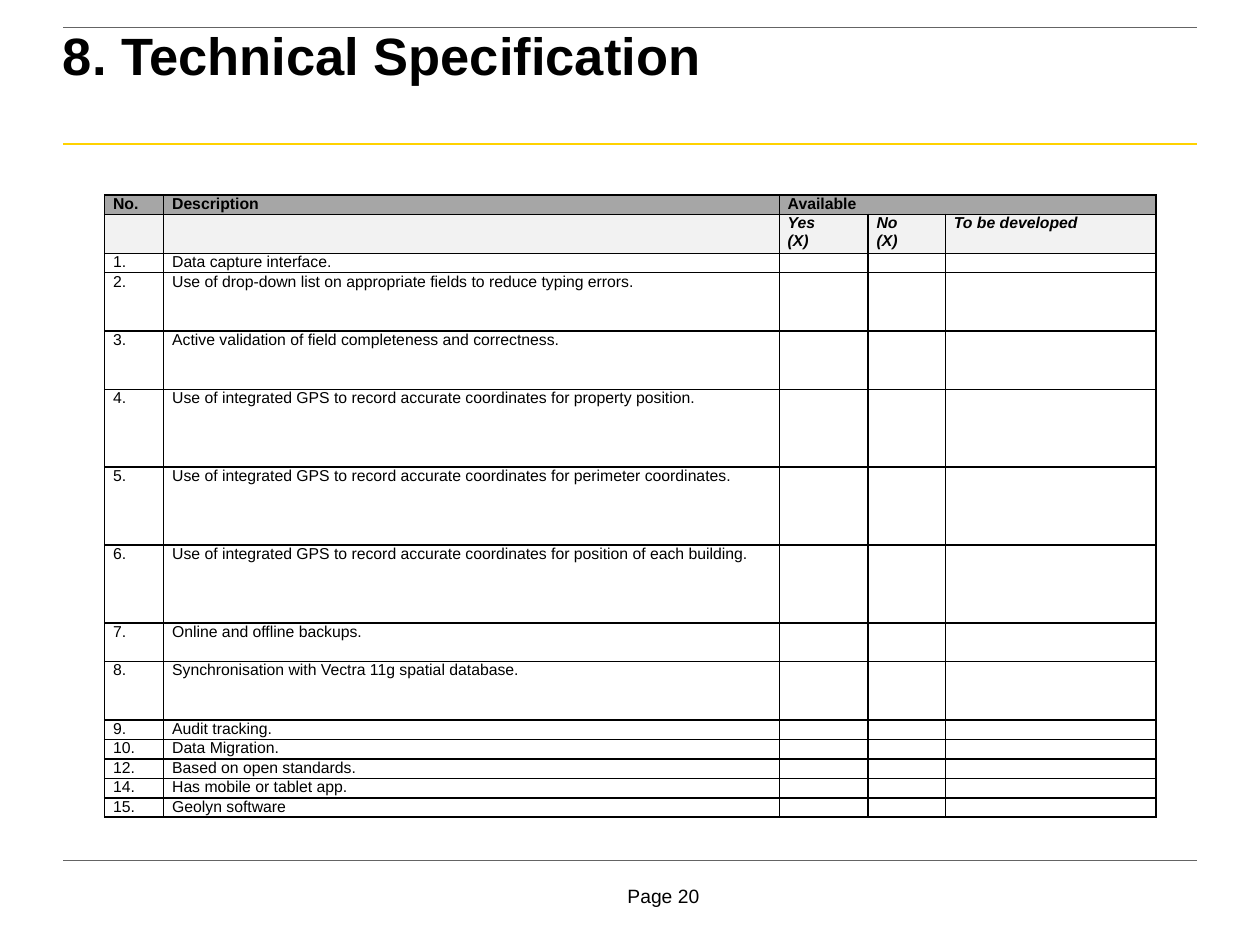
"""Build the technical specification checklist slide."""
from pptx import Presentation
from pptx.dml.color import RGBColor
from pptx.enum.shapes import MSO_CONNECTOR
from pptx.enum.text import MSO_ANCHOR, PP_ALIGN
from pptx.oxml.ns import qn
from pptx.util import Cm, Pt
from lxml import etree

STRAIGHT = MSO_CONNECTOR.STRAIGHT
TOP = MSO_ANCHOR.TOP
LEFT, JUSTIFY = PP_ALIGN.LEFT, PP_ALIGN.JUSTIFY

TITLE = "8. Technical Specification"
PAGE_LABEL = "Page 20"
HEADINGS = ["No.", "Description", "Available", "", ""]
SUBHEADINGS = ["", "", "Yes\n(X)", "No\n(X)", "To be developed"]
REQUIREMENTS = [
    ("1.", "Data capture interface.", 1),
    ("2.", "Use of drop-down list on appropriate fields to reduce typing errors.", 3),
    ("3.", "Active validation of field completeness and correctness.", 3),
    ("4.", "Use of integrated GPS to record accurate coordinates for property position.", 4),
    ("5.", "Use of integrated GPS to record accurate coordinates for perimeter coordinates.", 4),
    ("6.", "Use of integrated GPS to record accurate coordinates for position of each building.", 4),
    ("7.", "Online and offline backups.", 2),
    ("8.", "Synchronisation with Vectra 11g spatial database.", 3),
    ("9.", "Audit tracking.", 1),
    ("10.", "Data Migration.", 1),
    ("12.", "Based on open standards.", 1),
    ("14.", "Has mobile or tablet app.", 1),
    ("15.", "Geolyn software", 1),
]

THEME = {
    "font": "Arial",
    "text": "000000",
    "border": "000000",
    "heading": "A6A6A6",
    "subheading": "F2F2F2",
    "accent": "FFD200",
    "rule": "646464",
    "title_size": 30,
    "page_size": 11,
    "table_size": 9,
}
RULES = [
    (2.9, THEME["accent"], 1.5),
    (17.35, THEME["rule"], 0.25),
    (0.56, THEME["rule"], 0.5),
]
SLIDE_WIDTH, SLIDE_HEIGHT, MARGIN = 25.4, 19.05, 1.27
TABLE_LEFT, TABLE_TOP, TABLE_HEIGHT = 2.11, 3.93, 12.55
COLUMN_WIDTHS = [1.19, 12.41, 1.79, 1.56, 4.24]
CELL_FORMAT = {
    "margin_left": Cm(0.17),
    "margin_right": Cm(0.17),
    "margin_top": 0,
    "margin_bottom": 0,
    "vertical_anchor": TOP,
}
BOX_FORMAT = {
    "word_wrap": True,
    "margin_left": 0,
    "margin_right": 0,
    "margin_top": 0,
    "margin_bottom": 0,
    "vertical_anchor": TOP,
}
TITLE_FORMAT = {"alignment": JUSTIFY, "line_spacing": 0.85}


def apply_format(target, values):
    for name, value in values.items():
        setattr(target, name, value)


def add_span(para, text, size, **style):
    span = para.add_run()
    span.text = text
    apply_format(span.font, {"name": THEME["font"], "size": Pt(size), **style})
    span.font.color.rgb = RGBColor.from_string(THEME["text"])


def add_box(page, bounds, **overrides):
    box = page.shapes.add_textbox(*(Cm(length) for length in bounds))
    apply_format(box.text_frame, {**BOX_FORMAT, **overrides})
    return box.text_frame.paragraphs[0]


def add_rule(page, top, color, width):
    rule = page.shapes.add_connector(
        STRAIGHT, Cm(MARGIN), Cm(top), Cm(SLIDE_WIDTH - MARGIN), Cm(top))
    rule.line.color.rgb = RGBColor.from_string(color)
    rule.line.width = Pt(width)
    etree.SubElement(rule.element.spPr, qn("a:effectLst"))


def add_borders(cell):
    properties = cell._tc.get_or_add_tcPr()
    for position, side in enumerate(("lnL", "lnR", "lnT", "lnB")):
        line = etree.Element(qn(f"a:{side}"), w=str(Pt(1)))
        fill = etree.SubElement(line, qn("a:solidFill"))
        etree.SubElement(fill, qn("a:srgbClr"), val=THEME["border"])
        properties.insert(position, line)


def fill_cell(cell, text, color, style):
    apply_format(cell, CELL_FORMAT)
    if color:
        cell.fill.solid()
        cell.fill.fore_color.rgb = RGBColor.from_string(color)
    else:
        cell.fill.background()
    add_borders(cell)
    frame = cell.text_frame
    for index, line in enumerate(text.split("\n")):
        para = frame.add_paragraph() if index else frame.paragraphs[0]
        para.alignment = LEFT
        if line:
            add_span(para, line, THEME["table_size"], **style)
        else:
            etree.SubElement(para._p, qn("a:endParaRPr"), sz=str(THEME["table_size"] * 100))


def add_checklist(page):
    rows = [
        (HEADINGS, 1, THEME["heading"], {"bold": True}),
        (SUBHEADINGS, 2, THEME["subheading"], {"bold": True, "italic": True}),
    ]
    rows += [([number, description, "", "", ""], lines, None, {})
             for number, description, lines in REQUIREMENTS]
    line_height = TABLE_HEIGHT / sum(row[1] for row in rows)
    table = page.shapes.add_table(
        len(rows), len(COLUMN_WIDTHS), Cm(TABLE_LEFT), Cm(TABLE_TOP),
        Cm(sum(COLUMN_WIDTHS)), Cm(TABLE_HEIGHT)).table
    apply_format(table, {"first_row": False, "horz_banding": False})
    for column, width in zip(table.columns, COLUMN_WIDTHS):
        column.width = Cm(width)
    for row, (texts, lines, color, style) in zip(table.rows, rows):
        row.height = Cm(lines * line_height)
        for cell, text in zip(row.cells, texts):
            fill_cell(cell, text, color, style)
    table.cell(0, 2).merge(table.cell(0, 4))


def main():
    deck = Presentation()
    apply_format(deck, {"slide_width": Cm(SLIDE_WIDTH), "slide_height": Cm(SLIDE_HEIGHT)})
    page = deck.slides.add_slide(deck.slide_layouts[6])
    label = add_box(page, (12.65, 17.83, 1.85, 0.56), word_wrap=False)
    add_span(label, PAGE_LABEL, THEME["page_size"])
    for rule in RULES:
        add_rule(page, *rule)
    title = add_box(page, (MARGIN, 0.56, 23.29, 2.39), margin_top=Cm(0.1))
    apply_format(title, TITLE_FORMAT)
    indent = Cm(1)
    properties = title._p.get_or_add_pPr()
    properties.set("marL", str(indent))
    properties.set("indent", str(-indent))
    add_span(title, TITLE, THEME["title_size"], bold=True)
    add_checklist(page)
    deck.save("out.pptx")


if __name__ == "__main__":
    main()
